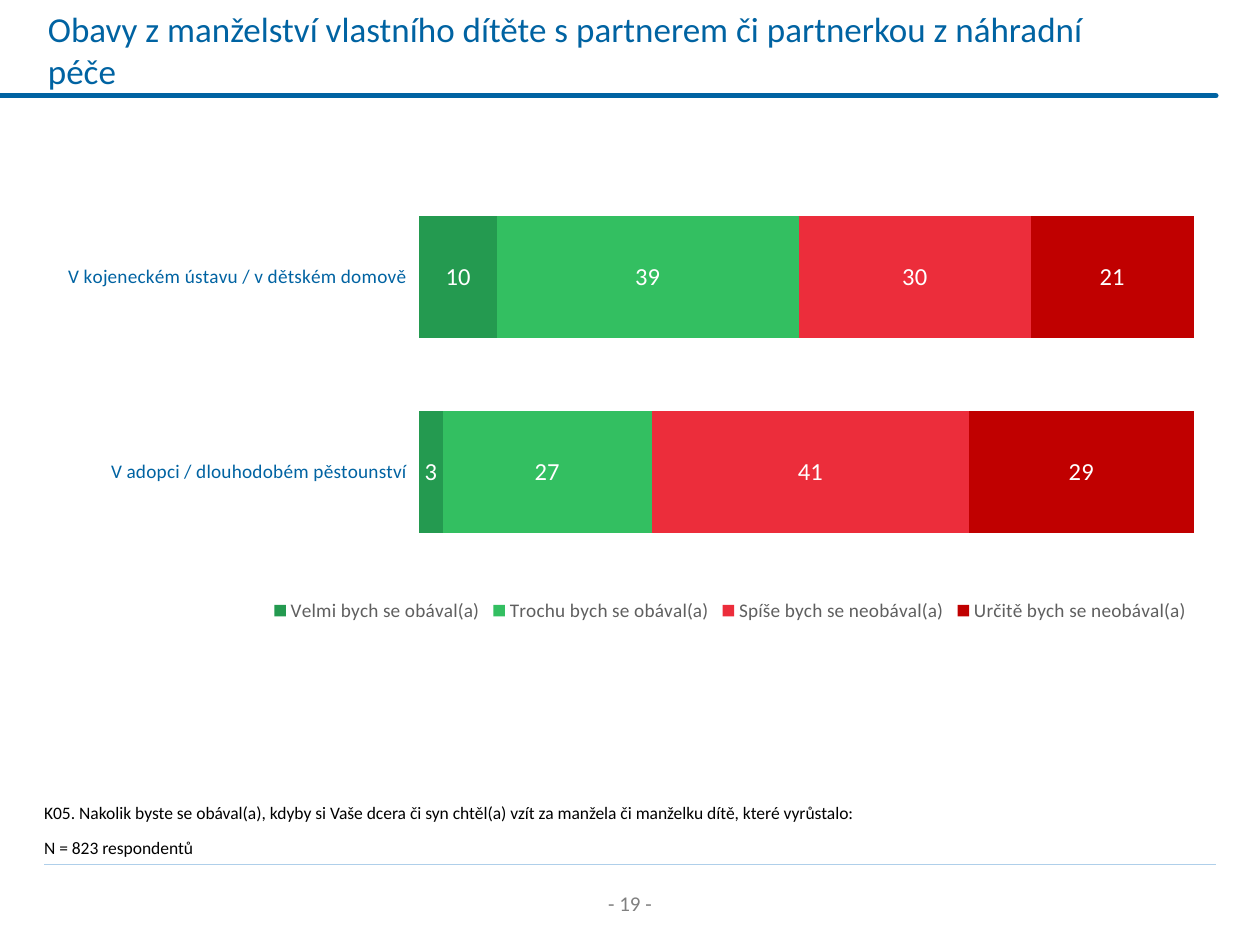
from lxml import etree
from pptx import Presentation
from pptx.chart.data import CategoryChartData
from pptx.dml.color import RGBColor
from pptx.enum.chart import XL_CHART_TYPE as ChartType
from pptx.enum.chart import XL_LABEL_POSITION as LabelPosition
from pptx.enum.chart import XL_LEGEND_POSITION as LegendPosition
from pptx.enum.chart import XL_TICK_MARK as TickMark
from pptx.enum.shapes import MSO_CONNECTOR as Connector
from pptx.enum.text import MSO_ANCHOR as Anchor
from pptx.enum.text import MSO_AUTO_SIZE as AutoSize
from pptx.enum.text import PP_ALIGN as Align
from pptx.oxml.ns import qn
from pptx.util import Inches, Pt

FONT = "Calibri"
BLUE = RGBColor(0x00, 0x63, 0xA2)
PALE_BLUE = RGBColor(0xAF, 0xCF, 0xEA)
GRAY = RGBColor(0x80, 0x80, 0x80)
DARK_GRAY = RGBColor(0x5F, 0x5F, 0x5F)
BLACK = RGBColor(0x00, 0x00, 0x00)
WHITE = RGBColor(0xFF, 0xFF, 0xFF)
DARK_GREEN = RGBColor(0x24, 0x9A, 0x50)
GREEN = RGBColor(0x33, 0xBF, 0x61)
RED = RGBColor(0xEC, 0x2D, 0x3B)
DARK_RED = RGBColor(0xC0, 0x00, 0x00)

TITLE = "Obavy z manželství vlastního dítěte s partnerem či partnerkou z náhradní péče"
UPBRINGING = ["V kojeneckém ústavu / v dětském domově", "V adopci / dlouhodobém pěstounství"]
ANSWERS = [
    ("Velmi bych se obával(a)", (10, 3), DARK_GREEN),
    ("Trochu bych se obával(a)", (39, 27), GREEN),
    ("Spíše bych se neobával(a)", (30, 41), RED),
    ("Určitě bych se neobával(a)", (21, 29), DARK_RED),
]
QUESTION = (
    "K05. Nakolik byste se obával(a), kdyby si Vaše dcera či syn chtěl(a) "
    "vzít za manžela či manželku dítě, které vyrůstalo:"
)
SAMPLE = "N = 823 respondentů"


def style_font(font, size, color):
    """Apply the slide's typeface with a size and colour."""
    font.name = FONT
    font.size = Pt(size)
    font.color.rgb = color


def write_text(shape, text, size=10, color=BLACK, align=Align.LEFT, anchor=Anchor.TOP, inset=0.1):
    """Fill a shape with one formatted paragraph."""
    frame = shape.text_frame
    frame.word_wrap = True
    frame.auto_size = AutoSize.NONE
    frame.vertical_anchor = anchor
    frame.margin_left = Inches(inset)
    paragraph = frame.paragraphs[0]
    paragraph.alignment = align
    run = paragraph.add_run()
    run.text = text
    style_font(run.font, size, color)


def add_rule(slide, left, top, width, color, weight, cap="flat"):
    """Draw a horizontal rule."""
    rule = slide.shapes.add_connector(
        Connector.STRAIGHT, Inches(left), Inches(top), Inches(left + width), Inches(top)
    )
    rule.line.color.rgb = color
    rule.line.width = Pt(weight)
    rule.get_or_add_ln().set("cap", cap)
    etree.SubElement(rule._element.spPr, qn("a:effectLst"))


def set_layout(parent, index, x, y, w, h, inner=False):
    """Place a chart part by fractions of the chart area."""
    for old in parent.findall(qn("c:layout")):
        parent.remove(old)
    layout = etree.Element(qn("c:layout"))
    parent.insert(index, layout)
    manual = etree.SubElement(layout, qn("c:manualLayout"))
    settings = [("layoutTarget", "inner")] if inner else []
    settings += [("xMode", "edge"), ("yMode", "edge"), ("x", x), ("y", y), ("w", w), ("h", h)]
    for tag, value in settings:
        etree.SubElement(manual, qn(f"c:{tag}")).set("val", str(value))


def add_header(slide, left, top, width, height):
    """Place the title and the rule that underlines it."""
    add_rule(slide, 0, top + 0.76, 9.65, BLUE, 3, cap="rnd")
    title = slide.shapes.title
    title.left, title.top = Inches(left), Inches(top)
    title.width, title.height = Inches(width), Inches(height)
    write_text(title, TITLE, size=20, color=BLUE, anchor=Anchor.MIDDLE)


def add_answer_chart(slide, left, top, width, height):
    """Chart the answers as stacked bars of 100 percent."""
    data = CategoryChartData(number_format="#,##0")
    data.categories = UPBRINGING
    for answer, shares, _ in ANSWERS:
        data.add_series(answer, shares)
    chart = slide.shapes.add_chart(
        ChartType.BAR_STACKED_100, Inches(left), Inches(top), Inches(width), Inches(height), data
    ).chart
    style_font(chart.font, 18, BLACK)
    chart.has_title = False

    categories = chart.category_axis
    categories.reverse_order = True
    categories.major_tick_mark = TickMark.OUTSIDE
    categories.format.line.fill.background()
    style_font(categories.tick_labels.font, 11, BLUE)
    chart.value_axis.has_major_gridlines = False
    chart.value_axis.visible = False

    plot = chart.plots[0]
    plot.gap_width, plot.overlap = 60, 100
    for series, (_, _, color) in zip(plot.series, ANSWERS):
        series.format.fill.solid()
        series.format.fill.fore_color.rgb = color
        labels = series.data_labels
        labels.show_value = True
        labels.position = LabelPosition.CENTER
        labels.number_format = "#,##0"
        labels.number_format_is_linked = False
        style_font(labels.font, 14, WHITE)

    chart.has_legend = True
    legend = chart.legend
    legend.position = LegendPosition.TOP
    legend.include_in_layout = False
    style_font(legend.font, 11, DARK_GRAY)
    set_layout(legend._element, 1, 0.19, 0.85, 0.79, 0.08)
    plot_area = chart._chartSpace.chart.plotArea
    set_layout(plot_area, 0, 0.32, 0.06, 0.66, 0.75, inner=True)


def add_notes_on_survey(slide, left, top, width):
    """Place the survey question and the sample size below it."""
    for row, (text, line_width) in enumerate([(QUESTION, width), (SAMPLE, 6.79)]):
        line = slide.shapes.add_textbox(
            Inches(left), Inches(top + row * 0.27), Inches(line_width), Inches(0.27)
        )
        write_text(line, text, inset=0)


def add_footer(slide, left, top, width):
    """Place the bottom rule and the centred page number."""
    add_rule(slide, left, top, width, PALE_BLUE, 0.5)
    number_width = 1.26
    page_number = slide.shapes.add_textbox(
        Inches(left + (width - number_width) / 2), Inches(top + 0.16),
        Inches(number_width), Inches(0.3),
    )
    write_text(page_number, "- 19 -", size=12, color=GRAY, align=Align.CENTER)


def main():
    """Build and save the slide."""
    deck = Presentation()
    deck.slide_width, deck.slide_height = Inches(10), Inches(7.5)
    slide = deck.slides.add_slide(deck.slide_layouts[5])
    add_footer(slide, 0.35, 6.86, 9.3)
    add_header(slide, 0.28, 0, 8.92, 0.79)
    add_answer_chart(slide, 0.35, 1.18, 9.31, 4.12)
    add_notes_on_survey(slide, 0.35, 6.32, 9.31)
    deck.save("out.pptx")


if __name__ == "__main__":
    main()
